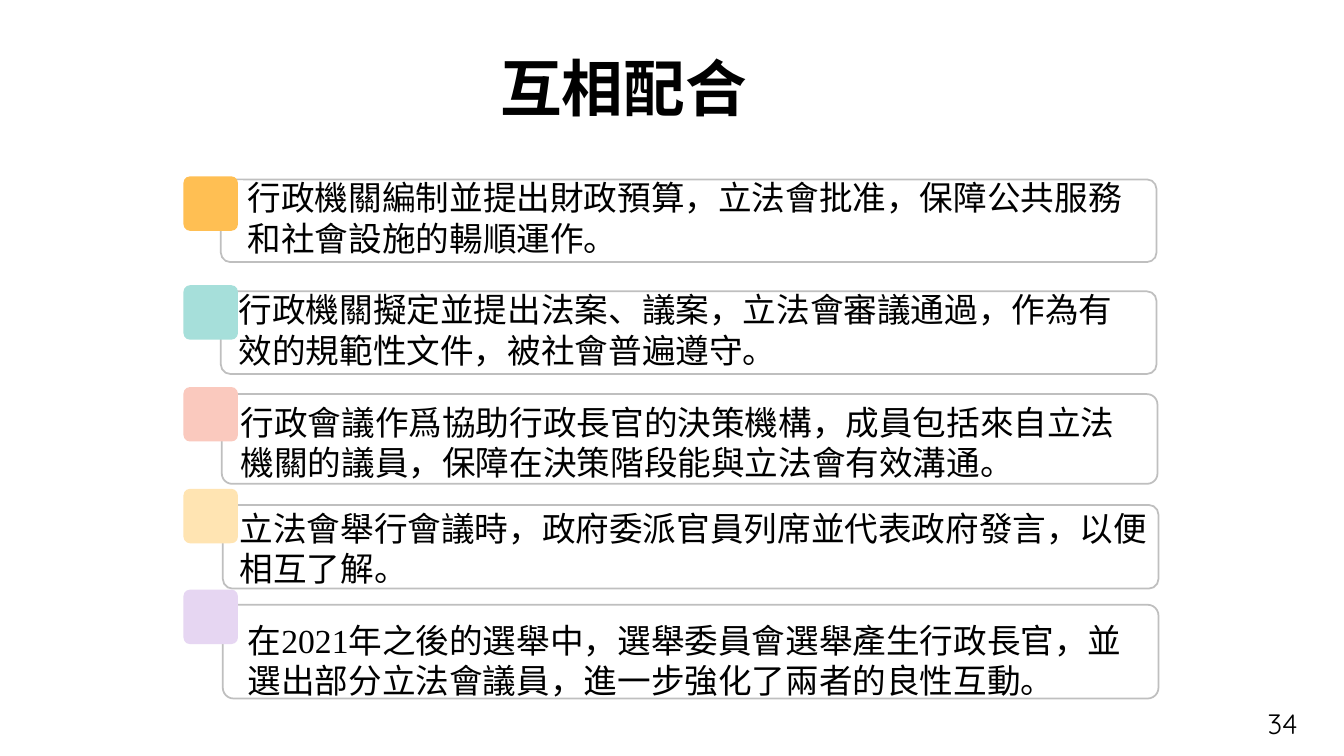
from dataclasses import dataclass

from pptx import Presentation
from pptx.dml.color import RGBColor
from pptx.enum.shapes import MSO_SHAPE
from pptx.enum.text import MSO_ANCHOR, PP_ALIGN
from pptx.shapes.autoshape import Shape
from pptx.slide import Slide
from pptx.text.text import TextFrame
from pptx.util import Inches, Pt

Box = tuple[float, float, float, float]
Run = tuple[str, str]

FACE = "Roboto"
CHIP = 0.54


@dataclass
class Row:
    frame: Box
    label: Box
    top: float
    color: str
    runs: list[Run]


ROWS = [
    Row((2.19, 1.78, 9.28, 0.82), (2.28, 1.66, 9.28, 1.01), 1.75, "FFBF53",
        [("行政機關編制並提出財政預算，立法會批准，保障公共服務和社會設施的輰順運作。", FACE)]),
    Row((2.19, 2.89, 9.28, 0.82), (2.19, 2.77, 9.28, 1.01), 2.83, "A6DFDA",
        [("行政機關擬定並提出法案、議案，立法會審議通過，作為有效的規範性文件，被社會普遍遵守。", FACE)]),
    Row((2.2, 3.91, 9.28, 0.89), (2.21, 3.89, 9.29, 1.01), 3.84, "FAC9BE",
        [("行政會議作爲協助行政長官的決策機構，成員包括來自立法機關的議員，保障在決策階段能與立法會有效溝通。", FACE)]),
    Row((2.21, 5.01, 9.28, 0.83), (2.2, 4.94, 9.44, 1.01), 4.85, "FFE4B2",
        [("立法會舉行會議時，政府委派官員列席並代表政府發言，以便相互了解。", FACE)]),
    Row((2.21, 6, 9.28, 0.93), (2.28, 6.05, 9.27, 1.01), 5.85, "E6D6F2",
        [("在", FACE), ("2021", "Times New Roman"),
         ("年之後的選舉中，選舉委員會選舉產生行政長官，並選出部分立法會議員，進一步強化了兩者的良性互動。", FACE)]),
]


def paint(code: str) -> RGBColor:
    return RGBColor.from_string(code)


def apply(target: object, style: dict[str, object]) -> None:
    for key, value in style.items():
        setattr(target, key, value)


def add_round(slide: Slide, box: Box, bend: float, fill: str = "", line: str = "") -> Shape:
    shape = slide.shapes.add_shape(MSO_SHAPE.ROUNDED_RECTANGLE, *map(Inches, box))
    shape.adjustments[0] = bend
    shape.shadow.inherit = False
    if fill:
        shape.fill.solid()
        shape.fill.fore_color.rgb = paint(fill)
    else:
        shape.fill.background()
    if line:
        shape.line.color.rgb = paint(line)
        shape.line.width = Pt(1.25)
    else:
        shape.line.fill.background()
    return shape


def write(frame: TextFrame, runs: list[Run], format: dict[str, object],
          layout: dict[str, object], style: dict[str, object]) -> None:
    apply(frame, {"word_wrap": True, **format})
    para = frame.paragraphs[0]
    apply(para, layout)
    for text, face in runs:
        run = para.add_run()
        run.text = text
        apply(run.font, {"name": face, **style})
        run.font.color.rgb = paint("000000")


def add_label(slide: Slide, row: Row) -> None:
    frame = add_round(slide, row.label, 0.167).text_frame
    write(frame, row.runs, {"vertical_anchor": MSO_ANCHOR.TOP},
          {"alignment": PP_ALIGN.LEFT}, {"size": Pt(24)})
    props = frame.paragraphs[0]._p.get_or_add_pPr()
    props.set("marL", str(Inches(0.03)))
    props.set("indent", "0")


def main() -> None:
    deck = Presentation()
    apply(deck, {"slide_width": Inches(13.33), "slide_height": Inches(7.5)})
    slide = deck.slides.add_slide(deck.slide_layouts[6])

    number = slide.shapes.add_textbox(*map(Inches, (9.97, 6.98, 3, 0.4)))
    write(number.text_frame, [("34", "Quicksand")],
          {"vertical_anchor": MSO_ANCHOR.MIDDLE},
          {"alignment": PP_ALIGN.RIGHT}, {"size": Pt(20)})

    for row in ROWS:
        add_round(slide, row.frame, 0.115, line="BFBFBF")
    for row in ROWS:
        add_label(slide, row)
    for row in ROWS:
        add_round(slide, (1.82, row.top, CHIP, CHIP), 0.119, fill=row.color)

    title = add_round(slide, (2.73, 0.5, 6.91, 0.81), 0.167)
    side, edge = Inches(0.27), Inches(0.03)
    write(title.text_frame, [("互相配合", FACE)],
          {"vertical_anchor": MSO_ANCHOR.MIDDLE, "margin_left": side,
           "margin_right": side, "margin_top": edge, "margin_bottom": edge},
          {"alignment": PP_ALIGN.CENTER, "line_spacing": 0.9},
          {"size": Pt(44), "bold": True})

    deck.save("out.pptx")


if __name__ == "__main__":
    main()
